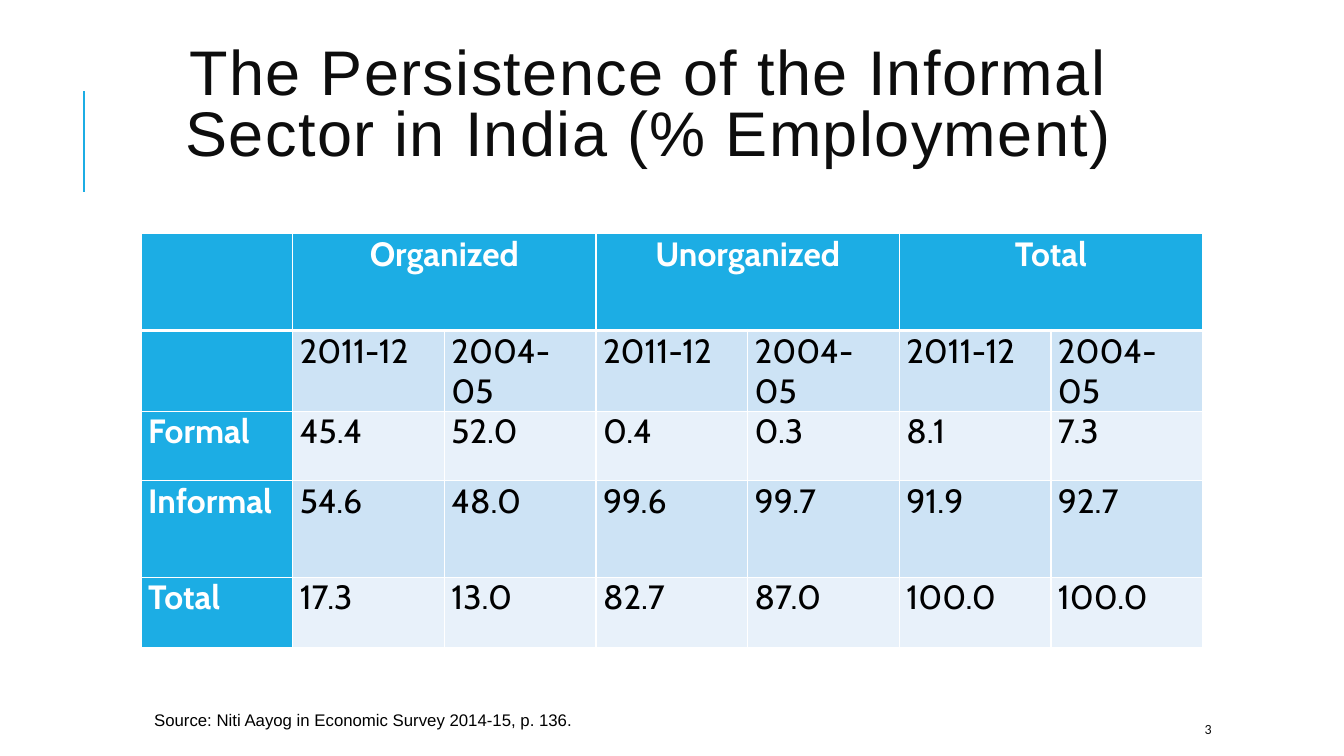
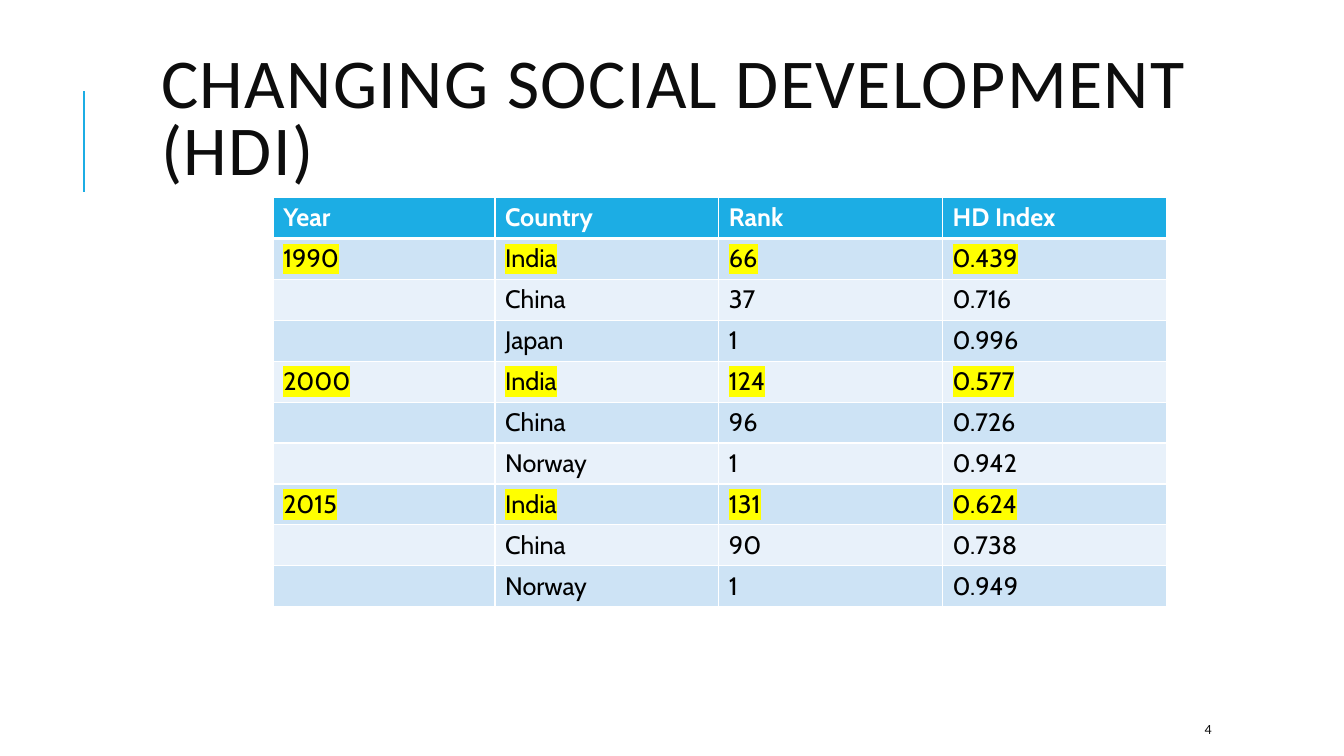
from lxml import etree
from pptx import Presentation, util as u
from pptx.dml.color import RGBColor
from pptx.enum import shapes, text
from pptx.oxml.ns import qn

ACCENT, BAND_DARK, BAND_LIGHT = "1CADE4", "CDE3F5", "E8F1FA"
WHITE, BLACK, INK, YELLOW = "FFFFFF", "000000", "0D0D0D", "FFFF00"
TITLE_ONLY = 5

EMPLOYMENT = [
    ["", "Organized", "", "Unorganized", "", "Total", ""],
    [""] + ["2011-12", "2004-05"] * 3,
    ["Formal", "45.4", "52.0", "0.4", "0.3", "8.1", "7.3"],
    ["Informal", "54.6", "48.0", "99.6", "99.7", "91.9", "92.7"],
    ["Total", "17.3", "13.0", "82.7", "87.0", "100.0", "100.0"],
]
DEVELOPMENT = [
    ["Year", "Country", "Rank", "HD Index"],
    ["1990", "India", "66", "0.439"],
    ["", "China", "37", "0.716"],
    ["", "Japan", "1", "0.996"],
    ["2000", "India", "124", "0.577"],
    ["", "China", "96", "0.726"],
    ["", "Norway", "1", "0.942"],
    ["2015", "India", "131", "0.624"],
    ["", "China", "90", "0.738"],
    ["", "Norway", "1", "0.949"],
]


def color(value):
    return RGBColor.from_string(value)


def write(frame, words, size, font, ink=BLACK, bold=False, align=None,
          line_spacing=None, tracking=None, highlight=None):
    para = frame.paragraphs[0]
    para.alignment = align
    para.line_spacing = line_spacing
    span = para.add_run()
    span.text = words
    span.font.size = u.Pt(size)
    span.font.name = font
    span.font.bold = bold
    span.font.color.rgb = color(ink)
    properties = span.font._element
    if tracking:
        properties.set("spc", str(tracking * 100))
    if highlight:
        mark = etree.Element(qn("a:highlight"))
        etree.SubElement(mark, qn("a:srgbClr"), val=highlight)
        properties.find(qn("a:solidFill")).addnext(mark)


def place(shape, left, top, width, height):
    shape.left, shape.top = u.Inches(left), u.Inches(top)
    shape.width, shape.height = u.Inches(width), u.Inches(height)


def add_text(page, words, area, wrap=True, **style):
    box = page.shapes.add_textbox(*map(u.Inches, area))
    box.text_frame.word_wrap = wrap
    box.text_frame.vertical_anchor = text.MSO_ANCHOR.MIDDLE
    write(box.text_frame, words, **style)


def add_page(deck, title, area, number, bottom_inset=0.05, **style):
    page = deck.slides.add_slide(deck.slide_layouts[TITLE_ONLY])
    heading = page.shapes.title
    place(heading, *area)
    frame = heading.text_frame
    frame.auto_size = text.MSO_AUTO_SIZE.NONE
    frame.word_wrap = True
    frame.vertical_anchor = text.MSO_ANCHOR.MIDDLE
    frame.margin_bottom = u.Inches(bottom_inset)
    write(frame, title, ink=INK, line_spacing=0.8, tracking=1, **style)

    rule = page.shapes.add_connector(
        shapes.MSO_CONNECTOR.STRAIGHT,
        u.Inches(0.83), u.Inches(1.9), u.Inches(0.83), u.Inches(0.9))
    rule.line.color.rgb = color(ACCENT)
    rule.line.width = u.Pt(1.5)
    etree.SubElement(rule._element.spPr, qn("a:effectLst"))

    add_text(page, number, (11.85, 7.08, 1.06, 0.3),
             size=10, font="Calibri", ink=INK)
    return page


def set_borders(cell, bottom):
    properties = cell._tc.get_or_add_tcPr()
    for index, side in enumerate(("lnL", "lnR", "lnT", "lnB")):
        width = bottom if side == "lnB" else 1
        line = etree.Element(qn("a:" + side), w=str(u.Pt(width)))
        fill = etree.SubElement(line, qn("a:solidFill"))
        etree.SubElement(fill, qn("a:srgbClr"), val=WHITE)
        properties.insert(index, line)


def add_grid(page, rows, left, top, widths, heights, size, header_column=False,
             insets=(0.1, 0.05), header_align=None, highlight_word=None):
    area = map(u.Inches, (left, top, sum(widths), sum(heights)))
    grid = page.shapes.add_table(len(rows), len(widths), *area).table
    grid.first_col = header_column
    for column, width in zip(grid.columns, widths):
        column.width = u.Inches(width)
    for r, (values, height) in enumerate(zip(rows, heights)):
        grid.rows[r].height = u.Inches(height)
        band = BAND_DARK if r % 2 else BAND_LIGHT
        marked = highlight_word in values
        for c, value in enumerate(values):
            cell = grid.cell(r, c)
            header = r == 0 or (header_column and c == 0)
            cell.fill.solid()
            cell.fill.fore_color.rgb = color(ACCENT if header else band)
            cell.margin_left = cell.margin_right = u.Inches(insets[0])
            cell.margin_top = cell.margin_bottom = u.Inches(insets[1])
            set_borders(cell, bottom=3 if r == 0 else 1)
            if value:
                write(cell.text_frame, value, size=size, font="Cabin",
                      ink=WHITE if header else BLACK, bold=header,
                      align=header_align if r == 0 else None,
                      highlight=YELLOW if marked else None)
    return grid


def add_employment_page(deck):
    page = add_page(
        deck, "The Persistence of the Informal Sector in India (% Employment)",
        (1.12, 0.64, 10.63, 1.64), "3", bottom_inset=0.83,
        size=45, font="Arial", align=text.PP_ALIGN.CENTER)
    grid = add_grid(page, EMPLOYMENT, 1.4, 2.32, [10.53 / 7] * 7,
                    [0.96, 0.69, 0.69, 0.96, 0.69], size=24,
                    header_column=True, insets=(0.07, 0),
                    header_align=text.PP_ALIGN.CENTER)
    for column in (1, 3, 5):
        grid.cell(0, column).merge(grid.cell(0, column + 1))
    add_text(page, "Source: Niti Aayog in Economic Survey 2014-15, p. 136.",
             (1.43, 6.99, 4.38, 0.3), wrap=False, size=12, font="Arial")


def add_development_page(deck):
    page = add_page(deck, "CHANGING SOCIAL DEVELOPMENT (HDI)",
                    (1.5, 0.75, 10.5, 0.92), "4",
                    size=50, font="Calibri", align=text.PP_ALIGN.LEFT)
    add_grid(page, DEVELOPMENT, 2.71, 1.96, [2.2] + [2.22] * 3,
             [4.06 / 10] * 10, size=18, highlight_word="India")


def main():
    deck = Presentation()
    deck.slide_width, deck.slide_height = u.Inches(13.33), u.Inches(7.5)
    add_employment_page(deck)
    add_development_page(deck)
    deck.save("out.pptx")


if __name__ == "__main__":
    main()
